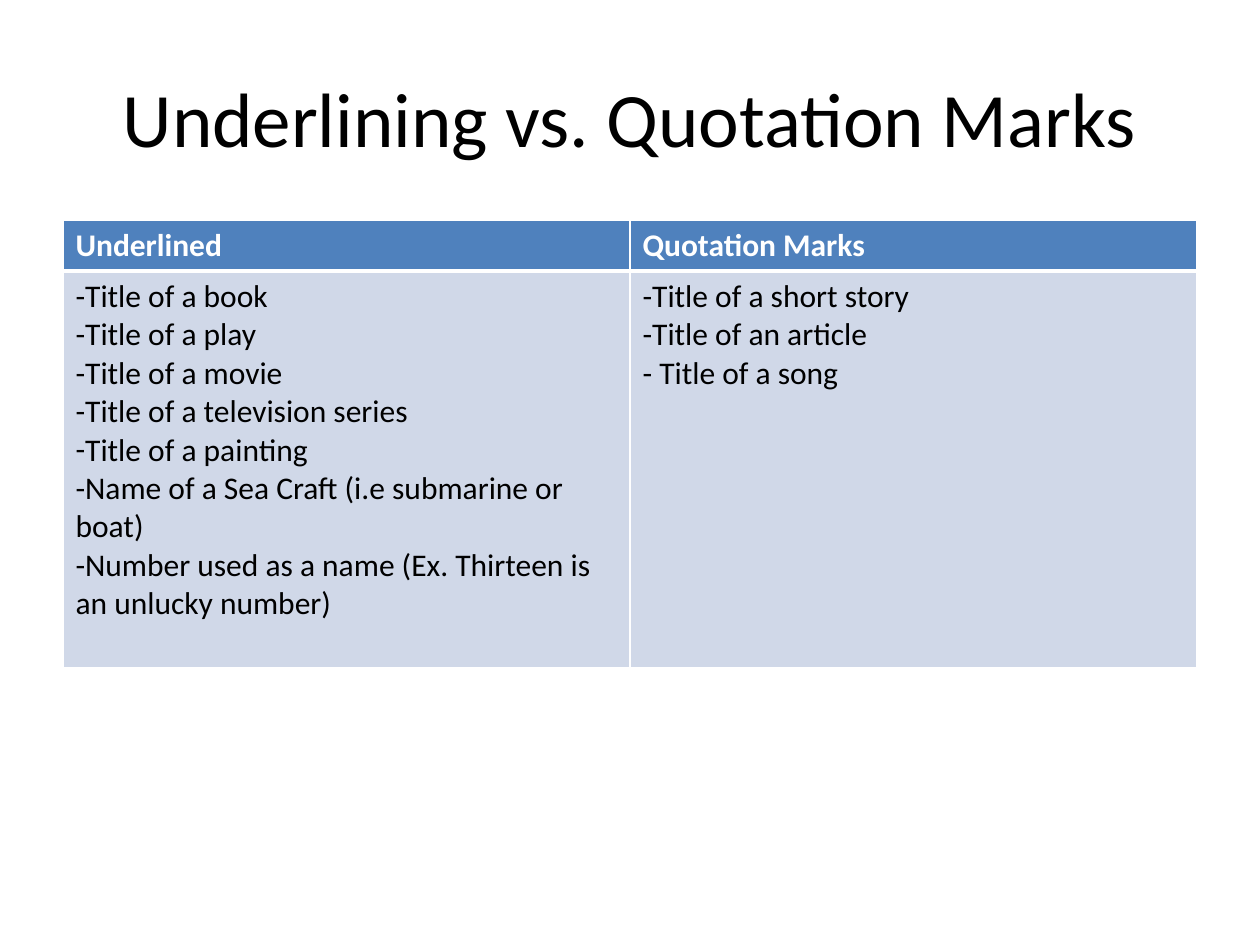
"""Build a slide that sets underlined titles against titles in quotation marks."""
from lxml import etree
from pptx import Presentation
from pptx import util as u
from pptx.dml.color import RGBColor
from pptx.enum import text
from pptx.oxml import ns

WIDTH, HEIGHT = 10, 7.5
MARGIN = 0.05 * WIDTH
CONTENT_WIDTH = WIDTH - 2 * MARGIN
FONT = "Calibri"
BLACK, WHITE, HEADER_BLUE, BODY_BLUE = "000000", "FFFFFF", "4F81BD", "D0D8E8"
ROW_HEIGHTS = [0.4, 3.15]
RULES = {
    "Underlined": [
        "Title of a book",
        "Title of a play",
        "Title of a movie",
        "Title of a television series",
        "Title of a painting",
        "Name of a Sea Craft (i.e submarine or boat)",
        "Number used as a name (Ex. Thirteen is an unlucky number)",
    ],
    "Quotation Marks": [
        "Title of a short story",
        "Title of an article",
        " Title of a song",
    ],
}


def color(hex_value):
    """Turn a hex string into a colour."""
    return RGBColor.from_string(hex_value)


def set_font(paragraph, size, hex_value, bold=False):
    """Style the whole paragraph."""
    font = paragraph.font
    font.name, font.size, font.bold = FONT, u.Pt(size), bold
    font.color.rgb = color(hex_value)


def add_title(slide, wording):
    """Add the centred slide title."""
    box = slide.shapes.add_textbox(
        u.Inches(MARGIN), u.Inches(0.04 * HEIGHT), u.Inches(CONTENT_WIDTH), u.Inches(1.25))
    frame = box.text_frame
    frame.word_wrap = True
    frame.vertical_anchor = text.MSO_ANCHOR.MIDDLE
    title = frame.paragraphs[0]
    title.text = wording
    title.alignment = text.PP_ALIGN.CENTER
    set_font(title, 44, BLACK)


def add_dash(paragraph):
    """Mark the paragraph with a dash bullet set tight against its text."""
    properties = paragraph._p.get_or_add_pPr()
    properties.set("marL", "0")
    properties.set("indent", "0")
    etree.SubElement(properties, ns.qn("a:buFont"), typeface=FONT)
    etree.SubElement(properties, ns.qn("a:buChar"), char="-")


def add_borders(cell, **points):
    """Draw white cell borders of the given widths, keyed by side."""
    properties = cell._tc.get_or_add_tcPr()
    for side in "LRTB":
        line = etree.SubElement(
            properties, ns.qn(f"a:ln{side}"), w=str(u.Pt(points.get(side, 1))))
        fill = etree.SubElement(line, ns.qn("a:solidFill"))
        etree.SubElement(fill, ns.qn("a:srgbClr"), val=WHITE)


def fill_cell(cell, lines, fill, font_color, is_header):
    """Write the lines into a cell and give it its borders and fill."""
    cell.text = "\n".join(lines)
    for paragraph in cell.text_frame.paragraphs:
        if not is_header:
            add_dash(paragraph)
        set_font(paragraph, 18, font_color, bold=is_header)
    add_borders(cell, **{"B" if is_header else "T": 3})
    cell.fill.solid()
    cell.fill.fore_color.rgb = color(fill)


def add_rules_table(slide, rules):
    """Add a table with one column for each way of marking titles."""
    table = slide.shapes.add_table(
        len(ROW_HEIGHTS), len(rules), u.Inches(MARGIN), u.Inches(1.75),
        u.Inches(CONTENT_WIDTH), u.Inches(sum(ROW_HEIGHTS))).table
    table.horz_banding = False
    for row, height in zip(table.rows, ROW_HEIGHTS):
        row.height = u.Inches(height)
    for column, (heading, examples) in enumerate(rules.items()):
        fill_cell(table.cell(0, column), [heading], HEADER_BLUE, WHITE, True)
        fill_cell(table.cell(1, column), examples, BODY_BLUE, BLACK, False)


def main():
    """Build and save the slide."""
    deck = Presentation()
    deck.slide_width, deck.slide_height = u.Inches(WIDTH), u.Inches(HEIGHT)
    slide = deck.slides.add_slide(deck.slide_layouts[6])
    add_title(slide, "Underlining vs. Quotation Marks")
    add_rules_table(slide, RULES)
    deck.save("out.pptx")


if __name__ == "__main__":
    main()
